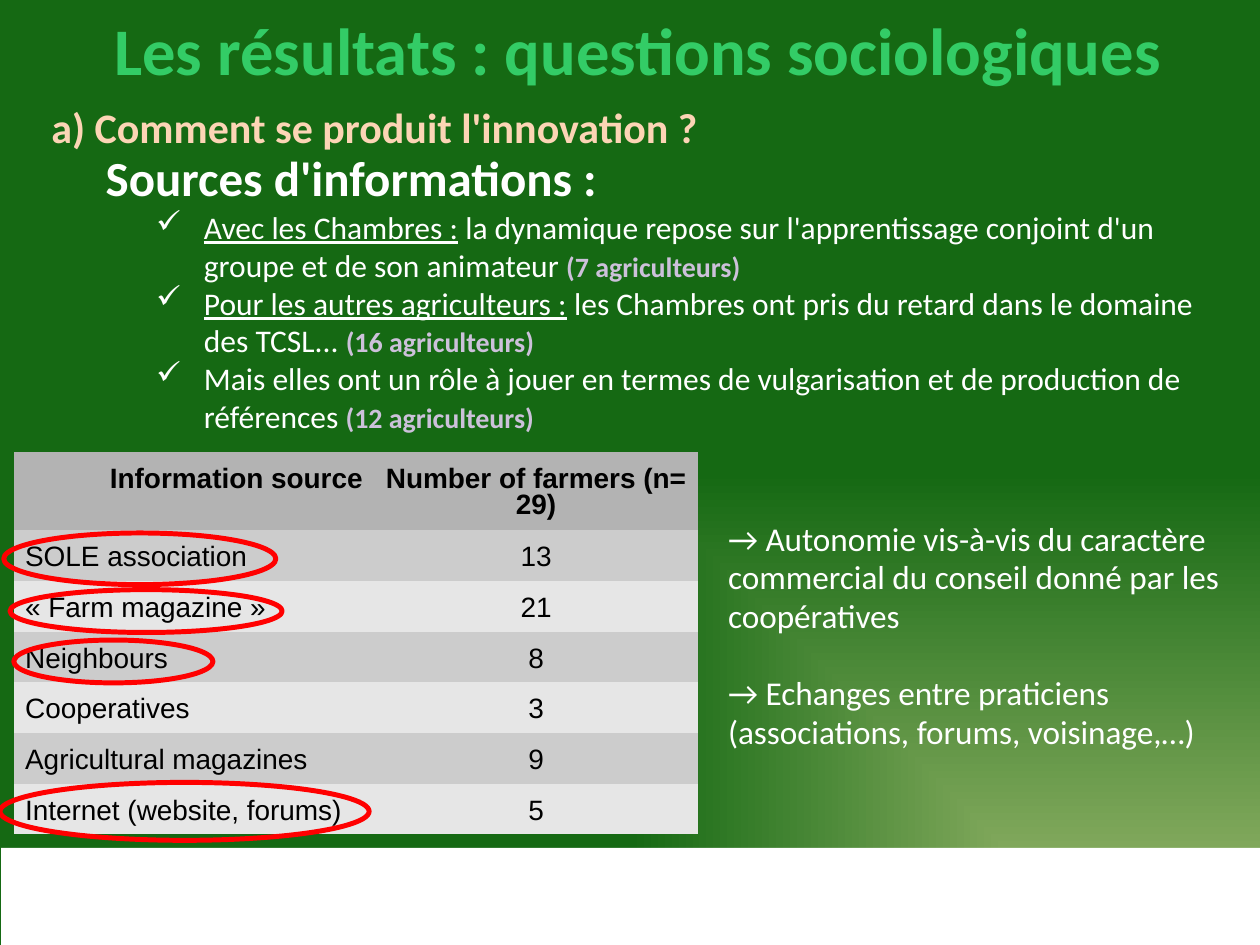
from lxml import etree
from pptx import Presentation
from pptx.dml.color import RGBColor
from pptx.enum.shapes import MSO_SHAPE
from pptx.enum.text import PP_ALIGN
from pptx.oxml import parse_xml
from pptx.oxml.ns import nsdecls, qn
from pptx.util import Inches, Pt

RECTANGLE, ELLIPSE = MSO_SHAPE.RECTANGLE, MSO_SHAPE.OVAL
LEFT, CENTER, RIGHT = PP_ALIGN.LEFT, PP_ALIGN.CENTER, PP_ALIGN.RIGHT

WHITE = RGBColor(0xFF, 0xFF, 0xFF)
BLACK = RGBColor(0x00, 0x00, 0x00)
RED = RGBColor(0xFF, 0x00, 0x00)
TITLE_GREEN = RGBColor(0x33, 0xCC, 0x66)
PEACH = RGBColor(0xFC, 0xD5, 0xB5)
LILAC = RGBColor(0xCC, 0xC1, 0xDA)
HEADER_GREY = RGBColor(0xB3, 0xB3, 0xB3)
DARK_GREY = RGBColor(0xCC, 0xCC, 0xCC)
LIGHT_GREY = RGBColor(0xE6, 0xE6, 0xE6)
NO_TABLE_STYLE = "{2D5ABB26-0587-4C30-8999-92F81FD0307C}"

presentation = Presentation()
presentation.slide_width, presentation.slide_height = Inches(10), Inches(7.5)
COLUMN = presentation.slide_width // 100
ROW = presentation.slide_height // 75
slide = presentation.slides.add_slide(presentation.slide_layouts[6])


def place(left, top, width, height):
    """Turn grid columns and rows into a position and size."""
    return int(left * COLUMN), int(top * ROW), int(width * COLUMN), int(height * ROW)


def add_run(paragraph, text, size, color, name="Calibri", **extra):
    run = paragraph.add_run()
    run.text = text
    run.font.color.rgb = color
    for attribute, value in {"size": Pt(size), "name": name, **extra}.items():
        setattr(run.font, attribute, value)


# Background glow from the bottom right corner
stops = [(0, "DDEBCF"), (0, "9CB86E"), (100, "156913")]
stop_xml = "".join(
    f'<a:gs pos="{share * 1000}"><a:srgbClr val="{color}"/></a:gs>' for share, color in stops
)
background = parse_xml(
    f'<p:bg {nsdecls("p", "a")}><p:bgPr><a:gradFill rotWithShape="1"><a:gsLst>{stop_xml}</a:gsLst>'
    '<a:path path="rect"><a:fillToRect l="100000" t="100000"/></a:path>'
    "</a:gradFill><a:effectLst/></p:bgPr></p:bg>"
)
slide.element.cSld.insert(0, background)

footer = slide.shapes.add_shape(RECTANGLE, *place(0.1, 67.3, 99.9, 7.7))
footer.shadow.inherit = False
footer.fill.solid()
footer.fill.fore_color.rgb = WHITE
footer.line.fill.background()

# Text boxes: position and top inset
boxes = {
    "sources": (place(6.4, 10.7, 92.9, 54), 0.1),
    "question": (place(3.1, 7.6, 82.7, 5), 0.05),
    "conclusions": (place(56.8, 40.8, 43.2, 29.9), 0.05),
    "title": (place(8.1, 0.2, 97.2, 5), 0.05),
}
frames = {}
for name, (position, top_inset) in boxes.items():
    frame = slide.shapes.add_textbox(*position).text_frame
    frame.word_wrap = True
    frame.margin_top = Inches(top_inset)
    frames[name] = frame

add_run(frames["title"].paragraphs[0], "Les résultats : questions sociologiques",
        38, TITLE_GREEN, bold=True)
add_run(frames["question"].paragraphs[0], "a) Comment se produit l'innovation\u00a0?",
        24, PEACH, bold=True)

heading = frames["sources"].paragraphs[0]
heading._p.get_or_add_pPr().set("marL", str(COLUMN))
heading.space_after = Pt(1)
add_run(heading, "Sources d'informations\u00a0:", 28, WHITE, bold=True)

findings = [
    ("Avec les Chambres\u00a0:",
     " la dynamique repose sur l'apprentissage conjoint d'un groupe et de son animateur ",
     "(7 agriculteurs)"),
    ("Pour les autres agriculteurs\u00a0:",
     " les Chambres ont pris du retard dans le domaine des TCSL... ",
     "(16 agriculteurs)"),
    ("",
     "Mais elles ont un rôle à jouer en termes de vulgarisation et de production de références ",
     "(12 agriculteurs)"),
]
for lead, statement, count in findings:
    paragraph = frames["sources"].add_paragraph()
    paragraph.level = 1
    properties = paragraph._p.get_or_add_pPr()
    properties.set("marL", str(Inches(0.88)))
    properties.set("indent", str(Inches(-0.38)))
    bullet_color = etree.SubElement(properties, qn("a:buClr"))
    etree.SubElement(bullet_color, qn("a:srgbClr")).set("val", str(WHITE))
    etree.SubElement(properties, qn("a:buChar")).set("char", "✓")
    if lead:
        add_run(paragraph, lead, 18, WHITE, underline=True)
    add_run(paragraph, statement, 18, WHITE)
    add_run(paragraph, count, 16, LILAC, bold=True)

conclusions = [
    "→ Autonomie vis-à-vis du caractère commercial du conseil donné par les coopératives",
    "→ Echanges entre praticiens (associations, forums, voisinage,…)",
]
for index, conclusion in enumerate(conclusions):
    frame = frames["conclusions"]
    paragraph = frame.add_paragraph() if index else frame.paragraphs[0]
    paragraph.line_spacing = 0.97
    if index:
        paragraph.space_before = Pt(22)
    add_run(paragraph, conclusion, 19, WHITE)

# Table of information sources
sources = [
    ("Information source", "Number of farmers (n= 29)"),
    ("SOLE association", "13"),
    ("«\u00a0Farm magazine\u00a0»", "21"),
    ("Neighbours", "8"),
    ("Cooperatives", "3"),
    ("Agricultural magazines", "9"),
    ("Internet (website, forums)", "5"),
]
table = slide.shapes.add_table(len(sources), 2, *place(1.1, 35.9, 54.3, 30.3)).table
table.first_row = table.horz_banding = False
table._tbl.tblPr.find(qn("a:tableStyleId")).text = NO_TABLE_STYLE
for column, width in zip(table.columns, (28.6, 25.7)):
    column.width = int(width * COLUMN)
for row_index, texts in enumerate(sources):
    is_header = row_index == 0
    table.rows[row_index].height = int((6.2 if is_header else 4.02) * ROW)
    band = HEADER_GREY if is_header else (LIGHT_GREY, DARK_GREY)[row_index % 2]
    for column_index, text in enumerate(texts):
        cell = table.cell(row_index, column_index)
        cell.fill.solid()
        cell.fill.fore_color.rgb = band
        margins = {"margin_left": 0.09, "margin_top": 0.13,
                   "margin_right": 0.09, "margin_bottom": 0.05}
        for attribute, value in margins.items():
            setattr(cell, attribute, Inches(value))
        paragraph = cell.text_frame.paragraphs[0]
        paragraph.alignment = CENTER if column_index else RIGHT if is_header else LEFT
        paragraph.line_spacing = 0.81
        add_run(paragraph, text, 16, BLACK, "Arial", bold=is_header)

# Rings around the main sources
rings = [
    (0.3, 42.3, 21.6, 4.1),
    (1.1, 50.8, 15.8, 3.4),
    (0.8, 46.8, 21.6, 3.4),
    (0, 62.1, 29.3, 4.6),
]
for ring_position in rings:
    ring = slide.shapes.add_shape(ELLIPSE, *place(*ring_position))
    ring.shadow.inherit = False
    ring.fill.background()
    ring.line.color.rgb = RED
    ring.line.width = Pt(2.83)

presentation.save("out.pptx")
